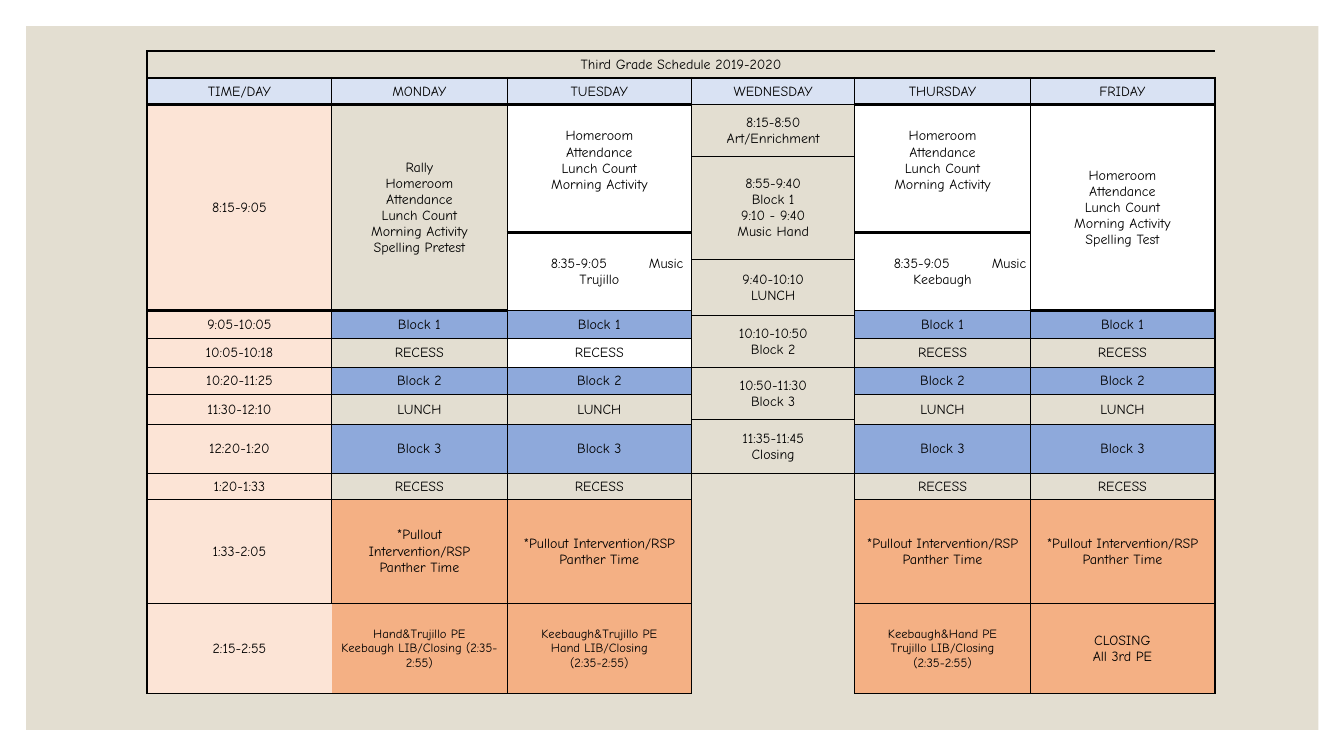
import dataclasses

import lxml.etree
import pptx
import pptx.dml.color
import pptx.enum.shapes
import pptx.enum.text
import pptx.oxml.ns
import pptx.util

Pt = pptx.util.Pt
ALIGN = pptx.enum.text.PP_ALIGN

FONT = "Comic Neue"
BLACK, WHITE, SAND = "000000", "FFFFFF", "E3DED1"
HEADER, TIME, BLOCK, AFTERNOON = "D9E2F3", "FCE4D6", "8EA9DB", "F4B084"
NO_STYLE = "{2D5ABB26-0587-4C30-8999-92F81FD0307C}"

COLUMN_WIDTHS = [131.8, 125.3, 131.8, 116.6, 125.3, 131.8]
ROW_HEIGHTS = [19, 19, 37, 54.6, 19, 36.7, 3.6, 16.2, 20.8, 19, 18, 4, 34.5, 18.7, 74.2, 64.6]
LAST_ROW = len(ROW_HEIGHTS) - 1
MONDAY, TUESDAY, WEDNESDAY, THURSDAY, FRIDAY = range(1, 6)
HOMEROOM = "Homeroom\nAttendance\nLunch Count\nMorning Activity"
PULLOUT = "*Pullout Intervention/RSP\nPanther Time"


@dataclasses.dataclass
class Entry:
    row: int
    column: int
    text: str
    fill: str | None = None
    rows: int = 1
    columns: int = 1
    size: float = 10
    bottom_margin: float = 0
    tabs: tuple[float, ...] = ()


@dataclasses.dataclass
class Period:
    row: int
    time: str
    activity: str
    fill: str | None = None
    rows: int = 1


PERIODS = [
    Period(6, "9:05-10:05", "Block 1", BLOCK, 2),
    Period(8, "10:05-10:18", "RECESS"),
    Period(9, "10:20-11:25", "Block 2", BLOCK),
    Period(10, "11:30-12:10", "LUNCH", rows=2),
    Period(12, "12:20-1:20", "Block 3", BLOCK),
    Period(13, "1:20-1:33", "RECESS"),
]

ENTRIES = [
    Entry(0, 0, "Third Grade Schedule 2019-2020", columns=6),
    Entry(2, 0, "8:15-9:05", TIME, 4),
    Entry(2, MONDAY, f"Rally\n{HOMEROOM}\nSpelling Pretest", rows=4),
    Entry(2, TUESDAY, HOMEROOM, WHITE, 2, bottom_margin=12),
    Entry(2, THURSDAY, HOMEROOM, WHITE, 2, bottom_margin=12),
    Entry(2, FRIDAY, f"{HOMEROOM}\nSpelling Test", WHITE, 4),
    Entry(4, TUESDAY, "\t8:35-9:05\tMusic\nTrujillo", WHITE, 2, tabs=(30.7, 100.7)),
    Entry(4, THURSDAY, "\t8:35-9:05\tMusic\nKeebaugh", WHITE, 2, tabs=(27.2, 97.2)),
    Entry(2, WEDNESDAY, "8:15-8:50\nArt/Enrichment"),
    Entry(3, WEDNESDAY, "8:55-9:40\nBlock 1\n9:10 - 9:40\nMusic Hand", rows=2),
    Entry(5, WEDNESDAY, "9:40-10:10\nLUNCH", rows=2),
    Entry(7, WEDNESDAY, "10:10-10:50\nBlock 2", rows=2),
    Entry(9, WEDNESDAY, "10:50-11:30\nBlock 3", rows=2),
    Entry(11, WEDNESDAY, "11:35-11:45\nClosing", rows=2),
    Entry(13, WEDNESDAY, "", rows=3),
    Entry(14, 0, "1:33-2:05", TIME),
    Entry(14, MONDAY, "*Pullout\nIntervention/RSP\nPanther Time", AFTERNOON),
    Entry(14, TUESDAY, PULLOUT, AFTERNOON),
    Entry(14, THURSDAY, PULLOUT, AFTERNOON),
    Entry(14, FRIDAY, PULLOUT, AFTERNOON),
    Entry(15, 0, "2:15-2:55", TIME),
    Entry(15, MONDAY, "Hand&Trujillo PE\nKeebaugh LIB/Closing (2:35-2:55)", AFTERNOON, size=9),
    Entry(15, TUESDAY, "Keebaugh&Trujillo PE\nHand LIB/Closing\n(2:35-2:55)", AFTERNOON, size=9),
    Entry(15, THURSDAY, "Keebaugh&Hand PE\nTrujillo LIB/Closing\n(2:35-2:55)", AFTERNOON, size=9),
    Entry(15, FRIDAY, "CLOSING\nAll 3rd PE", AFTERNOON),
]


def color(value: str) -> pptx.dml.color.RGBColor:
    return pptx.dml.color.RGBColor.from_string(value)


def add_element(parent, tag: str, **attributes: str):
    return lxml.etree.SubElement(parent, pptx.oxml.ns.qn(tag), attributes)


def all_entries() -> list[Entry]:
    days = ["TIME/DAY", "MONDAY", "TUESDAY", "WEDNESDAY", "THURSDAY", "FRIDAY"]
    entries = ENTRIES + [Entry(1, column, day, HEADER) for column, day in enumerate(days)]
    for period in PERIODS:
        entries.append(Entry(period.row, 0, period.time, TIME, period.rows))
        for day in (MONDAY, TUESDAY, THURSDAY, FRIDAY):
            fill = WHITE if (period.row, day) == (8, TUESDAY) else period.fill
            entries.append(Entry(period.row, day, period.activity, fill, period.rows))
    return entries


def horizontal_weight(edge: int, column: int) -> float:
    if edge <= 1:
        return 1.5
    if edge == 2:
        return 0.5 if column == WEDNESDAY else 2
    if edge > LAST_ROW:
        return 1 if column == TUESDAY else 1.5
    return 0.5


def vertical_weight(edge: int, row: int) -> float:
    if edge == 1 and row == LAST_ROW:
        return 0
    return 1.5 if edge in (0, len(COLUMN_WIDTHS)) else 0.5


def draw_borders(table, entry: Entry) -> None:
    last_row = entry.row + entry.rows - 1
    last_column = entry.column + entry.columns - 1
    for row in range(entry.row, last_row + 1):
        for column in range(entry.column, last_column + 1):
            sides = [
                ("a:lnL", column == entry.column, vertical_weight(column, row)),
                ("a:lnR", column == last_column, vertical_weight(column + 1, row)),
                ("a:lnT", row == entry.row, horizontal_weight(row, column)),
                ("a:lnB", row == last_row, horizontal_weight(row + 1, column)),
            ]
            properties = table.cell(row, column)._tc.get_or_add_tcPr()
            for tag, outer, weight in sides:
                if outer and weight:
                    line = add_element(properties, tag, w=str(int(Pt(weight))))
                    add_element(add_element(line, "a:solidFill"), "a:srgbClr", val=BLACK)


def write_text(cell, entry: Entry) -> None:
    cell.text_frame.text = entry.text
    for paragraph in cell.text_frame.paragraphs:
        tabbed = "\t" in paragraph.text
        paragraph.alignment = ALIGN.LEFT if tabbed else ALIGN.CENTER
        if tabbed:
            stops = add_element(paragraph._p.get_or_add_pPr(), "a:tabLst")
            for position in entry.tabs:
                add_element(stops, "a:tab", pos=str(int(Pt(position))), algn="l")
        for run in paragraph.runs:
            run.font.name = FONT
            run.font.size = Pt(entry.size)
            run.font.color.rgb = color(BLACK)


def draw_entry(table, entry: Entry) -> None:
    cell = table.cell(entry.row, entry.column)
    if entry.rows * entry.columns > 1:
        cell.merge(table.cell(entry.row + entry.rows - 1, entry.column + entry.columns - 1))
    cell.margin_left = cell.margin_right = cell.margin_top = Pt(0.7)
    cell.margin_bottom = Pt(entry.bottom_margin)
    cell.vertical_anchor = pptx.enum.text.MSO_ANCHOR.MIDDLE
    draw_borders(table, entry)
    if entry.fill:
        cell.fill.solid()
        cell.fill.fore_color.rgb = color(entry.fill)
    else:
        cell.fill.background()
    write_text(cell, entry)


def draw_panel(slide) -> None:
    panel = slide.shapes.add_shape(
        pptx.enum.shapes.MSO_SHAPE.RECTANGLE, Pt(18.7), Pt(18.7), Pt(923), Pt(502.6))
    panel.shadow.inherit = False
    panel.fill.solid()
    panel.fill.fore_color.rgb = color(SAND)
    panel.line.fill.background()


def draw_schedule(slide) -> None:
    table = slide.shapes.add_table(
        len(ROW_HEIGHTS), len(COLUMN_WIDTHS), Pt(105.1), Pt(36.6),
        Pt(sum(COLUMN_WIDTHS)), Pt(sum(ROW_HEIGHTS))).table
    table.first_row = table.horz_banding = False
    table._tbl.tblPr.find(pptx.oxml.ns.qn("a:tableStyleId")).text = NO_STYLE
    for column, width in zip(table.columns, COLUMN_WIDTHS):
        column.width = Pt(width)
    for row, height in zip(table.rows, ROW_HEIGHTS):
        row.height = Pt(height)
    for entry in all_entries():
        draw_entry(table, entry)


def main() -> None:
    presentation = pptx.Presentation()
    presentation.slide_width, presentation.slide_height = Pt(960), Pt(540)
    slide = presentation.slides.add_slide(presentation.slide_layouts[6])
    draw_panel(slide)
    draw_schedule(slide)
    presentation.save("out.pptx")


if __name__ == "__main__":
    main()
